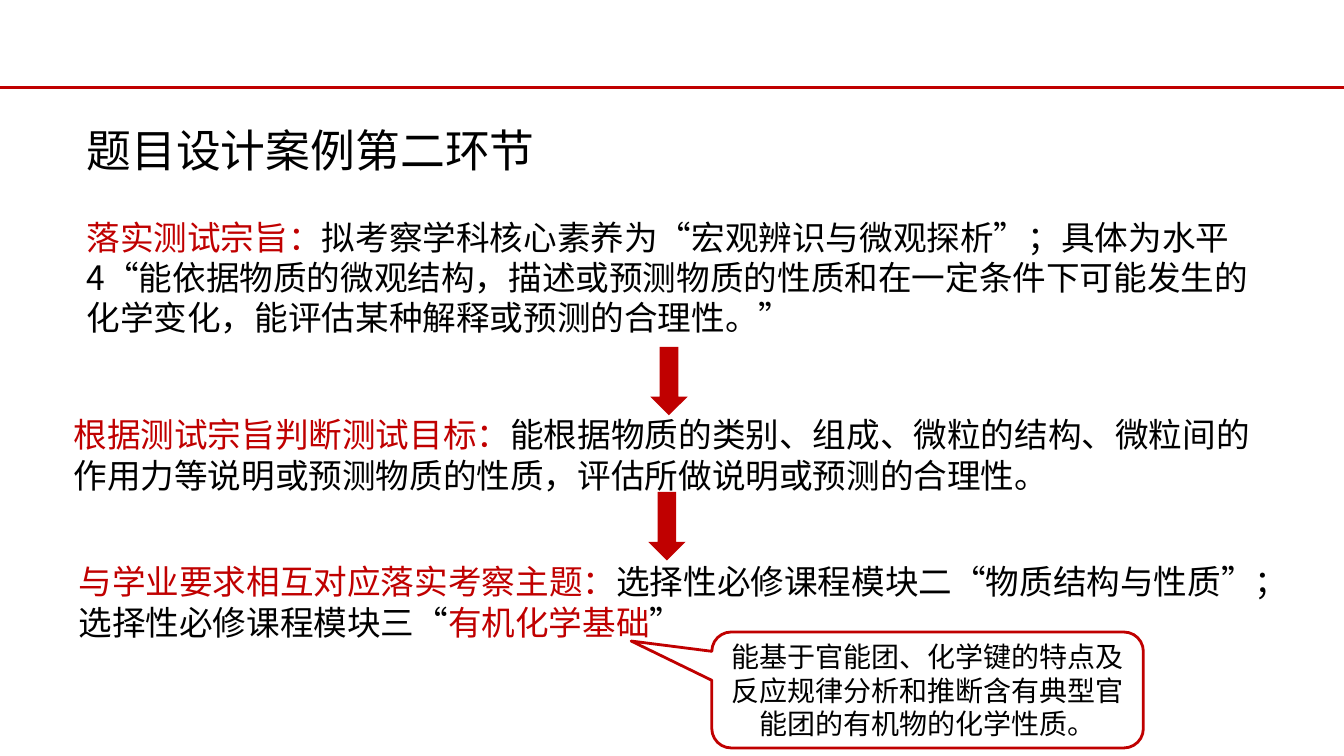
from dataclasses import dataclass
from typing import NamedTuple

from lxml.etree import SubElement
from pptx import Presentation
from pptx.dml.color import RGBColor as RGB
from pptx.enum.shapes import MSO_CONNECTOR as Connector, MSO_SHAPE as Preset
from pptx.enum.text import MSO_ANCHOR as Anchor, MSO_AUTO_SIZE as AutoSize, PP_ALIGN as Align
from pptx.oxml.ns import qn
from pptx.util import Inches, Pt


@dataclass(frozen=True)
class Theme:
    font: str = "Noto Sans CJK SC"
    red: RGB = RGB(0xC0, 0x00, 0x00)
    black: RGB = RGB(0x00, 0x00, 0x00)
    white: RGB = RGB(0xFF, 0xFF, 0xFF)
    title_size: int = 32
    body_size: int = 24
    callout_size: int = 20
    rule_width: float = 2.25
    callout_width: float = 2


THEME = Theme()


class Box(NamedTuple):
    left: float
    top: float
    width: float
    height: float

    def lengths(self) -> list:
        return [Inches(value) for value in self]


class Phrase(NamedTuple):
    words: str
    color: RGB = THEME.black


class Passage(NamedTuple):
    box: Box
    phrases: list[Phrase]
    size: int = THEME.body_size


PASSAGES = [
    Passage(Box(0.76, 1.17, 4.8, 0.64), [Phrase("题目设计案例第二环节")], THEME.title_size),
    Passage(Box(0.76, 2.1, 11.89, 1.31), [
        Phrase("落实测试宗旨：", THEME.red),
        Phrase("拟考察学科核心素养为“宏观辨识与微观探析”；具体为水平4“能依据物质的微观结构，"
               "描述或预测物质的性质和在一定条件下可能发生的化学变化，能评估某种解释或预测的合理性。”"),
    ]),
    Passage(Box(0.63, 4.06, 11.89, 0.91), [
        Phrase("根据测试宗旨判断测试目标：", THEME.red),
        Phrase("能根据物质的类别、组成、微粒的结构、微粒间的作用力等说明或预测物质的性质，"
               "评估所做说明或预测的合理性。"),
    ]),
    Passage(Box(0.68, 5.52, 11.89, 0.91), [
        Phrase("与学业要求相互对应落实考察主题：", THEME.red),
        Phrase("选择性必修课程模块二“物质结构与性质”；选择性必修课程模块三“"),
        Phrase("有机化学基础", THEME.red),
        Phrase("”"),
    ]),
]
CALLOUT = Passage(
    Box(7.06, 6.27, 4.28, 1.15),
    [Phrase("能基于官能团、化学键的特点及反应规律分析和推断含有典型官能团的有机物的化学性质。")],
    THEME.callout_size,
)
CALLOUT_TAIL = (-0.687, -0.422, 0.167)
STEP_ARROWS = [Box(6.45, 3.44, 0.37, 0.68), Box(6.43, 4.88, 0.37, 0.68)]


def write_phrases(paragraph, passage: Passage) -> None:
    for phrase in passage.phrases:
        run = paragraph.add_run()
        run.text = phrase.words
        run.font.color.rgb = phrase.color
        for name, value in {"size": Pt(passage.size), "name": THEME.font}.items():
            setattr(run.font, name, value)
        # Chinese characters take the East Asian typeface
        SubElement(run.font._element, qn("a:ea"), typeface=THEME.font)


def draw_passage(slide, passage: Passage) -> None:
    frame = slide.shapes.add_textbox(*passage.box.lengths()).text_frame
    for name, value in {"word_wrap": True, "auto_size": AutoSize.SHAPE_TO_FIT_TEXT}.items():
        setattr(frame, name, value)
    write_phrases(frame.paragraphs[0], passage)


def draw_preset(slide, preset: Preset, box: Box, fill: RGB):
    shape = slide.shapes.add_shape(preset, *box.lengths())
    shape.shadow.inherit = False
    shape.fill.solid()
    shape.fill.fore_color.rgb = fill
    shape.line.fill.background()
    return shape


def draw_callout(slide, passage: Passage) -> None:
    callout = draw_preset(slide, Preset.ROUNDED_RECTANGULAR_CALLOUT, passage.box, THEME.white)
    callout.fill.background()
    callout.line.color.rgb = THEME.red
    callout.line.width = Pt(THEME.callout_width)
    for index, value in enumerate(CALLOUT_TAIL):
        callout.adjustments[index] = value
    frame = callout.text_frame
    for name, value in {"word_wrap": True, "vertical_anchor": Anchor.MIDDLE}.items():
        setattr(frame, name, value)
    frame.paragraphs[0].alignment = Align.CENTER
    write_phrases(frame.paragraphs[0], passage)


def draw_header_rule(slide) -> None:
    rule = slide.shapes.add_connector(
        Connector.STRAIGHT, Inches(-0.03), Inches(0.87), Inches(13.36), Inches(0.87))
    rule.line.color.rgb = THEME.red
    rule.line.width = Pt(THEME.rule_width)
    SubElement(rule._element.spPr, qn("a:effectLst"))


def main() -> None:
    deck = Presentation()
    deck.slide_width, deck.slide_height = Inches(13.33), Inches(7.5)
    slide = deck.slides.add_slide(deck.slide_layouts[6])

    # Header rule, title and the three steps
    draw_header_rule(slide)
    for passage in PASSAGES:
        draw_passage(slide, passage)

    # Note on the last topic
    draw_callout(slide, CALLOUT)

    # Arrows between the steps
    for box in STEP_ARROWS:
        draw_preset(slide, Preset.DOWN_ARROW, box, THEME.red)

    deck.save("out.pptx")


if __name__ == "__main__":
    main()
